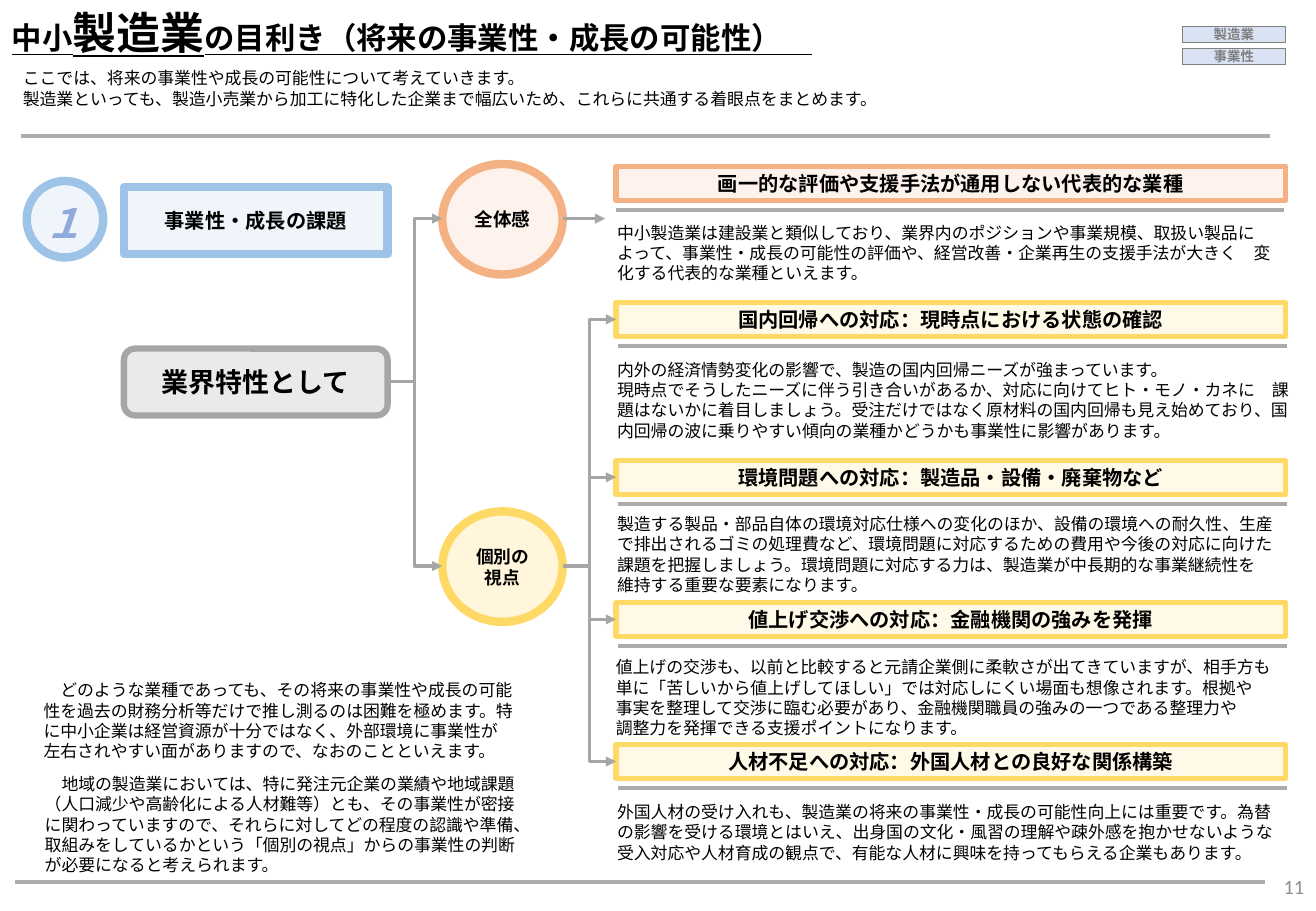
from lxml import etree
from pptx import Presentation, util as u
from pptx.dml.color import RGBColor
from pptx.enum import shapes, text
from pptx.oxml.ns import qn

COLORS = {
    "black": "000000", "gray": "A6A6A6", "rule": "AFABAB", "page": "8C8C8C",
    "tag": "DAE3F3", "tag_line": "808080",
    "orange": "F8CBAD", "orange_line": "F4B183",
    "cream": "FFE699", "yellow": "FFD966",
    "blue": "BDD7EE", "blue_line": "9DC3E6", "number": "8FAADC",
}


def rgb(name):
    return RGBColor.from_string(COLORS[name])


def write_text(frame, paragraphs, size=10, color="black", bold=False, italic=False,
               underline=False, font="Calibri", align="LEFT", anchor="TOP",
               inset=None, grow=False):
    frame.word_wrap = True
    frame.vertical_anchor = getattr(text.MSO_ANCHOR, anchor)
    if grow:
        frame.auto_size = text.MSO_AUTO_SIZE.SHAPE_TO_FIT_TEXT
    if inset is not None:
        frame.margin_left = frame.margin_right = u.Inches(inset)
        frame.margin_top = frame.margin_bottom = u.Inches(inset)
    for index, runs in enumerate(paragraphs):
        paragraph = frame.add_paragraph() if index else frame.paragraphs[0]
        paragraph.alignment = getattr(text.PP_ALIGN, align)
        for words, run_size in [(runs, size)] if isinstance(runs, str) else runs:
            run = paragraph.add_run()
            run.text = words
            run.font.name = font
            run.font.size = u.Pt(run_size)
            run.font.bold = bold
            run.font.italic = italic
            run.font.underline = underline
            run.font.color.rgb = rgb(color)


class SlideBuilder:
    def __init__(self, slide):
        self.slide = slide

    def box(self, kind, place, fill, line, width, paragraphs=(), alpha=23, **style):
        shape = self.slide.shapes.add_shape(
            getattr(shapes.MSO_SHAPE, kind), *map(u.Inches, place))
        shape.shadow.inherit = False
        shape.fill.solid()
        shape.fill.fore_color.rgb = rgb(fill)
        if alpha < 100:
            color = shape.fill._xPr.find(qn("a:solidFill"))[0]
            etree.SubElement(color, qn("a:alpha"), val=str(alpha * 1000))
        shape.line.color.rgb = rgb(line)
        shape.line.width = u.Pt(width)
        write_text(shape.text_frame, paragraphs,
                   **{"bold": True, "align": "CENTER", "anchor": "MIDDLE", **style})

    def label(self, place, paragraphs, **style):
        shape = self.slide.shapes.add_textbox(*map(u.Inches, place))
        write_text(shape.text_frame, paragraphs, **{"grow": True, **style})

    def connector(self, kind, start, end, color, width, arrow=False):
        connector = self.slide.shapes.add_connector(
            getattr(shapes.MSO_CONNECTOR, kind), *map(u.Inches, start + end))
        connector.line.color.rgb = rgb(color)
        connector.line.width = u.Pt(width)
        if arrow:
            etree.SubElement(connector.line._get_or_add_ln(), qn("a:tailEnd"), type="triangle")
        etree.SubElement(connector._element.spPr, qn("a:effectLst"))

    def rule(self, left, top, right):
        self.connector("STRAIGHT", (left, top), (right, top), "rule", 2.25)

    def arrow(self, start, end):
        kind = "STRAIGHT" if start[1] == end[1] else "ELBOW"
        self.connector(kind, start, end, "gray", 2, arrow=True)


TOPICS = [
    (1.37, "画一的な評価や支援手法が通用しない代表的な業種", (4.98, 1.78, 5.59, 0.61), [
        "中小製造業は建設業と類似しており、業界内のポジションや事業規模、取扱い製品によって、"
        "事業性・成長の可能性の評価や、経営改善・企業再生の支援手法が大きく　変化する代表的な業種といえます。"]),
    (2.49, "国内回帰への対応：現時点における状態の確認", (4.98, 2.91, 5.74, 0.77), [
        "内外の経済情勢変化の影響で、製造の国内回帰ニーズが強まっています。",
        "現時点でそうしたニーズに伴う引き合いがあるか、対応に向けてヒト・モノ・カネに　課題はないかに"
        "着目しましょう。受注だけではなく原材料の国内回帰も見え始めており、国内回帰の波に"
        "乗りやすい傾向の業種かどうかも事業性に影響があります。"]),
    (3.79, "環境問題への対応：製造品・設備・廃棄物など", (4.98, 4.18, 5.63, 0.77), [
        "製造する製品・部品自体の環境対応仕様への変化のほか、設備の環境への耐久性、生産で排出される"
        "ゴミの処理費など、環境問題に対応するための費用や今後の対応に向けた課題を把握しましょう。"
        "環境問題に対応する力は、製造業が中長期的な事業継続性を　維持する重要な要素になります。"]),
    (4.96, "値上げ交渉への対応：金融機関の強みを発揮", (4.97, 5.36, 5.64, 0.77), [
        "値上げの交渉も、以前と比較すると元請企業側に柔軟さが出てきていますが、相手方も単に"
        "「苦しいから値上げしてほしい」では対応しにくい場面も想像されます。根拠や　事実を整理して"
        "交渉に臨む必要があり、金融機関職員の強みの一つである整理力や",
        "調整力を発揮できる支援ポイントになります。"]),
    (6.13, "人材不足への対応：外国人材との良好な関係構築", (4.98, 6.55, 5.63, 0.61), [
        "外国人材の受け入れも、製造業の将来の事業性・成長の可能性向上には重要です。為替の影響を"
        "受ける環境とはいえ、出身国の文化・風習の理解や疎外感を抱かせないような受入対応や"
        "人材育成の観点で、有能な人材に興味を持ってもらえる企業もあります。"]),
]
NOTES = [
    ((0.26, 5.55, 4.09, 0.77),
     "　どのような業種であっても、その将来の事業性や成長の可能性を過去の財務分析等だけで推し測るのは"
     "困難を極めます。特に中小企業は経営資源が十分ではなく、外部環境に事業性が　左右されやすい面が"
     "ありますので、なおのことといえます。"),
    ((0.27, 6.32, 4.14, 0.94),
     "　地域の製造業においては、特に発注元企業の業績や地域課題（人口減少や高齢化による人材難等）とも、"
     "その事業性が密接に関わっていますので、それらに対してどの程度の認識や準備、取組みをしているか"
     "という「個別の視点」からの事業性の判断が必要になると考えられます。"),
]
OVERALL_Y, DETAIL_Y, TRAIT_Y = 1.8, 4.66, 3.14


def main():
    presentation = Presentation()
    presentation.slide_width = u.Inches(10.83)
    presentation.slide_height = u.Inches(7.5)
    builder = SlideBuilder(presentation.slides.add_slide(presentation.slide_layouts[6]))

    builder.label((0, 0, 7.05, 0.54),
                  [[("中小", 18), ("製造業", 26), ("の目利き（将来の事業性・成長の可能性）　", 18)]],
                  font="Arial", bold=True, underline=True)
    builder.label((0.09, 0.51, 8.37, 0.44), [
        "ここでは、将来の事業性や成長の可能性について考えていきます。",
        "製造業といっても、製造小売業から加工に特化した企業まで幅広いため、これらに共通する着眼点をまとめます。"])
    for top, tag in ((0.22, "製造業"), (0.4, "事業性")):
        builder.box("RECTANGLE", (9.73, top, 0.85, 0.13), "tag", "tag_line", 0.75, [tag],
                    alpha=100, size=8, color="tag_line", inset=0, grow=True)
    builder.rule(0.17, 1.12, 10.45)
    builder.rule(0.12, 7.26, 10.41)

    builder.box("RECTANGLE", (1.02, 1.54, 2.17, 0.55), "blue", "blue_line", 5,
                ["事業性・成長の課題"], size=12)
    builder.box("OVAL", (0.22, 1.49, 0.63, 0.63), "blue", "blue_line", 5)
    builder.label((0.26, 1.58, 0.49, 0.5), ["１"], size=24, color="number",
                  bold=True, italic=True, align="CENTER")
    builder.box("ROUNDED_RECTANGLE", (1.02, 2.87, 2.17, 0.55), "gray", "gray", 3.75,
                ["業界特性として"], size=16)
    builder.box("OVAL", (3.64, 1.35, 0.99, 0.91), "orange", "orange_line", 5,
                ["全体感"], size=11)
    builder.box("OVAL", (3.64, 4.21, 0.99, 0.91), "yellow", "yellow", 5,
                ["個別の", "視点"], size=10.5)

    for index, (top, heading, place, body) in enumerate(TOPICS):
        fill, line = ("cream", "yellow") if index else ("orange", "orange_line")
        left = 5.09 if index else 5.07
        builder.label(place, body)
        builder.rule(left, top + 0.36, left + 5.5)
        builder.box("RECTANGLE", (5.07, top, 5.51, 0.28), fill, line, 3.25, [heading], size=12)
        if index:
            builder.arrow((4.63, DETAIL_Y), (5.07, top + 0.14))
    builder.arrow((4.63, OVERALL_Y), (4.98, OVERALL_Y))
    for target in (OVERALL_Y, DETAIL_Y):
        builder.arrow((3.18, TRAIT_Y), (3.64, target))

    for place, note in NOTES:
        builder.label(place, [note])
    builder.label((10.3, 7.1, 0.53, 0.4), ["11"], size=12, color="page",
                  align="RIGHT", anchor="MIDDLE", grow=False)
    presentation.save("out.pptx")


if __name__ == "__main__":
    main()
